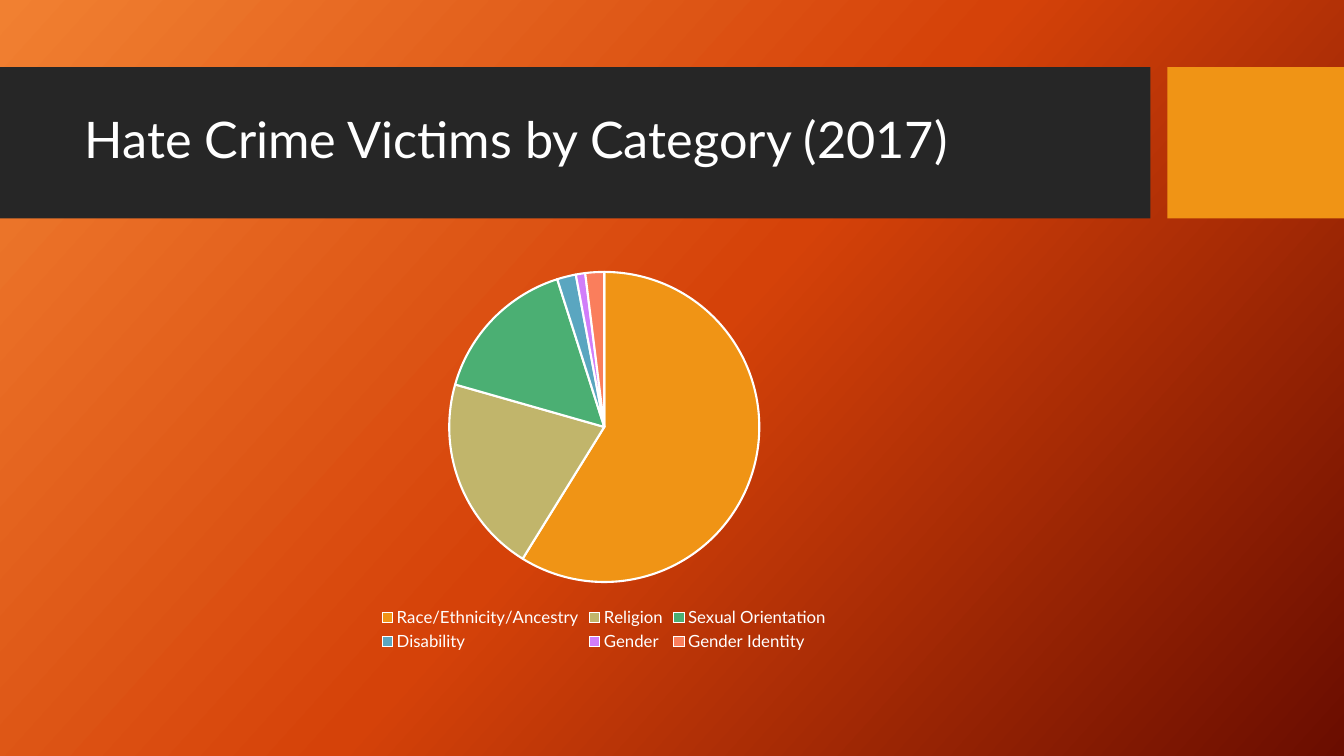
import copy
import pptx
import pptx.chart.data
import pptx.dml.color
import pptx.enum.chart
import pptx.enum.shapes
import pptx.enum.text
import pptx.oxml.ns
import pptx.util

Pt = pptx.util.Pt
FONT = "Lato"
WHITE = "FFFFFF"
SHARES = [
    ("Race/Ethnicity/Ancestry", 60, "F09415"),
    ("Religion", 21, "C1B56B"),
    ("Sexual Orientation", 16, "4BAF73"),
    ("Disability", 2, "5AA6C0"),
    ("Gender", 1, "D17DF9"),
    ("Gender Identity", 2, "FA7E5C"),
]


def color(text):
    return pptx.dml.color.RGBColor.from_string(text)


def style(font, size):
    font.name = FONT
    font.size = Pt(size)
    font.color.rgb = color(WHITE)


def paint(slide, stops, angle):
    fill = slide.background.fill
    fill.gradient()
    fill.gradient_angle = 360 - angle
    group = slide.element.find(".//" + pptx.oxml.ns.qn("a:gsLst"))
    group.insert(1, copy.deepcopy(group[0]))
    for stop, (place, tone) in zip(fill.gradient_stops, stops):
        stop.position = place
        stop.color.rgb = color(tone)


def add_block(slide, left, width, tone):
    block = slide.shapes.add_shape(
        pptx.enum.shapes.MSO_SHAPE.RECTANGLE,
        Pt(left), Pt(48), Pt(width), Pt(108))
    block.shadow.inherit = False
    block.fill.solid()
    block.fill.fore_color.rgb = color(tone)
    block.line.fill.background()


def set_title(slide, text):
    title = slide.shapes.title
    title.left, title.top = Pt(53.3), Pt(59)
    title.width, title.height = Pt(756.7), Pt(85)
    tree = title.element.getparent()
    tree.append(title.element)
    frame = title.text_frame
    frame.word_wrap = True
    frame.vertical_anchor = pptx.enum.text.MSO_ANCHOR.MIDDLE
    para = frame.paragraphs[0]
    para.alignment = pptx.enum.text.PP_ALIGN.LEFT
    para.line_spacing = 0.9
    run = para.add_run()
    run.text = text
    style(run.font, 36)


def add_pie(slide):
    data = pptx.chart.data.CategoryChartData()
    data.categories = [name for name, share, tone in SHARES]
    data.add_series("Series 1", [share for name, share, tone in SHARES])
    chart = slide.shapes.add_chart(
        pptx.enum.chart.XL_CHART_TYPE.PIE,
        Pt(53.3), Pt(184.3), Pt(756.7), Pt(283.7), data).chart
    style(chart.font, 10)
    chart.has_title = False
    chart.has_legend = True
    chart.legend.position = pptx.enum.chart.XL_LEGEND_POSITION.BOTTOM
    chart.legend.include_in_layout = False
    style(chart.legend.font, 12)
    plot = chart.plots[0]
    plot.vary_by_categories = True
    for place, (name, share, tone) in enumerate(SHARES):
        slice_form = plot.series[0].points[place].format
        slice_form.fill.solid()
        slice_form.fill.fore_color.rgb = color(tone)
        slice_form.line.color.rgb = color(WHITE)
        slice_form.line.width = Pt(1.5)


def main():
    deck = pptx.Presentation()
    deck.slide_width, deck.slide_height = Pt(960), Pt(540)
    slide = deck.slides.add_slide(deck.slide_layouts[5])
    paint(slide, [(0, "F18031"), (0.5, "D54209"), (1, "6A0D00")], 42)
    add_block(slide, 0, 821.8, "262626")
    add_block(slide, 833.8, 126.2, "F09415")
    set_title(slide, "Hate Crime Victims by Category (2017)")
    add_pie(slide)
    deck.save("out.pptx")


if __name__ == "__main__":
    main()
